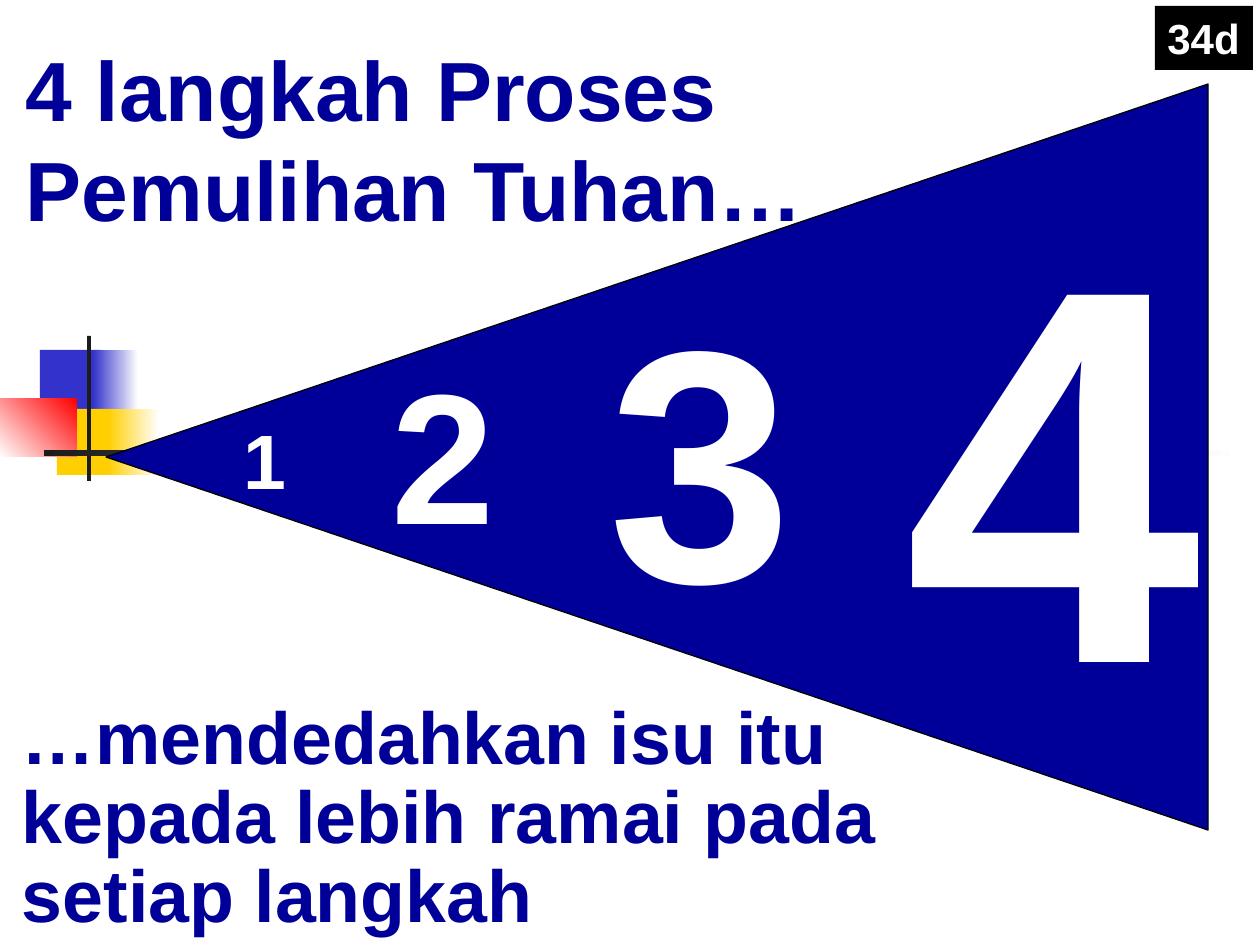
from dataclasses import dataclass

from pptx import Presentation
from pptx.dml.color import RGBColor
from pptx.enum.shapes import MSO_SHAPE as Shape
from pptx.enum.text import MSO_ANCHOR as Anchor, MSO_AUTO_SIZE as AutoSize, PP_ALIGN as Align
from pptx.util import Pt

EMU_PER_PX = 914400 / 126


def px(length):
    return round(length * EMU_PER_PX)


@dataclass(frozen=True)
class Theme:
    font: str = "Arial"
    navy: str = "000099"
    white: str = "FFFFFF"
    black: str = "000000"
    ink: str = "1C1C1C"
    blue: str = "3333CC"
    yellow: str = "FFCF01"
    red: str = "FF0000"
    title_size: int = 48
    body_size: int = 42
    label_size: int = 24


class SlideBuilder:
    def __init__(self, page, theme):
        self.page = page
        self.theme = theme

    def place(self, item, bounds):
        item.left, item.top, item.width, item.height = map(px, bounds)

    def set_text(self, para, text, size, color):
        para.text = text
        para.font.name = self.theme.font
        para.font.size = Pt(size)
        para.font.bold = True
        para.font.color.rgb = RGBColor.from_string(color)
        para.alignment = Align.LEFT

    def shape(self, bounds, color, kind=Shape.RECTANGLE, outline=None):
        item = self.page.shapes.add_shape(kind, *map(px, bounds))
        item.shadow.inherit = False
        item.fill.solid()
        item.fill.fore_color.rgb = RGBColor.from_string(color)
        if outline:
            item.line.color.rgb = RGBColor.from_string(outline)
            item.line.width = Pt(0.75)
        else:
            item.line.fill.background()
        return item

    def fade(self, bounds, start, end, angle=0):
        item = self.shape(bounds, start)
        item.fill.gradient()
        item.fill.gradient_angle = angle
        for stop, color in zip(item.fill.gradient_stops, (start, end)):
            stop.color.rgb = RGBColor.from_string(color)

    def fill_placeholder(self, box, bounds, lines, size, spacing):
        self.place(box, bounds)
        box.element.getparent().append(box.element)  # bring to front
        frame = box.text_frame
        frame.word_wrap = True
        frame.auto_size = AutoSize.NONE
        frame.vertical_anchor = Anchor.BOTTOM
        frame.margin_left = px(22)  # inset plus paragraph indent
        for index, line in enumerate(lines):
            para = frame.add_paragraph() if index else frame.paragraphs[0]
            self.set_text(para, line, size, self.theme.navy)
            para.line_spacing = spacing
            para.space_before = Pt(0)

    def label(self, box, text, size):
        frame = box.text_frame
        frame.word_wrap = False
        frame.auto_size = AutoSize.SHAPE_TO_FIT_TEXT
        frame.vertical_anchor = Anchor.TOP
        self.set_text(frame.paragraphs[0], text, size, self.theme.white)

    def number(self, bounds, text, size):
        self.label(self.page.shapes.add_textbox(*map(px, bounds)), text, size)


def main():
    deck = Presentation()
    deck.slide_width, deck.slide_height = px(1260), px(945)
    page = deck.slides.add_slide(deck.slide_layouts[0])
    theme = Theme()
    builder = SlideBuilder(page, theme)
    title, body = page.placeholders

    # Corner ornament: solid squares, fading squares and crossing bars
    builder.shape((40, 350, 61, 66), theme.blue)
    builder.fade((93, 350, 45, 66), theme.blue, theme.white)
    builder.shape((57, 409, 58, 66), theme.yellow)
    builder.fade((108, 409, 51, 66), theme.yellow, theme.white)
    builder.fade((0, 399, 77, 58), theme.white, theme.red, angle=45)
    builder.shape((87, 336, 4, 145), theme.ink)
    builder.fade((44, 450, 1197, 6), theme.ink, theme.white)

    # Title
    builder.fill_placeholder(title, (4, 18, 1113, 227),
                             ["4 langkah Proses Pemulihan Tuhan…"], theme.title_size, 1.0)

    # Triangle opening to the right
    triangle = builder.shape((284, -94, 746, 1102), theme.navy,
                             Shape.ISOSCELES_TRIANGLE, theme.black)
    triangle.rotation = 270

    # Growing step numbers
    steps = [
        ((231, 406, 69, 106), 44),
        ((379, 333, 129, 236), 106),
        ((596, 246, 209, 410), 189),
        ((892, 123, 323, 653), 305),
    ]
    for step, (bounds, size) in enumerate(steps, start=1):
        builder.number(bounds, str(step), size)

    # Closing statement
    builder.fill_placeholder(body, (0, 693, 1113, 252),
                             ["…mendedahkan isu itu", "kepada lebih ramai pada setiap langkah"],
                             theme.body_size, 0.9)

    # Page tag
    tag = builder.shape((1155, 6, 98, 64), theme.black)
    builder.label(tag, "34d", theme.label_size)

    deck.save("out.pptx")


if __name__ == "__main__":
    main()
